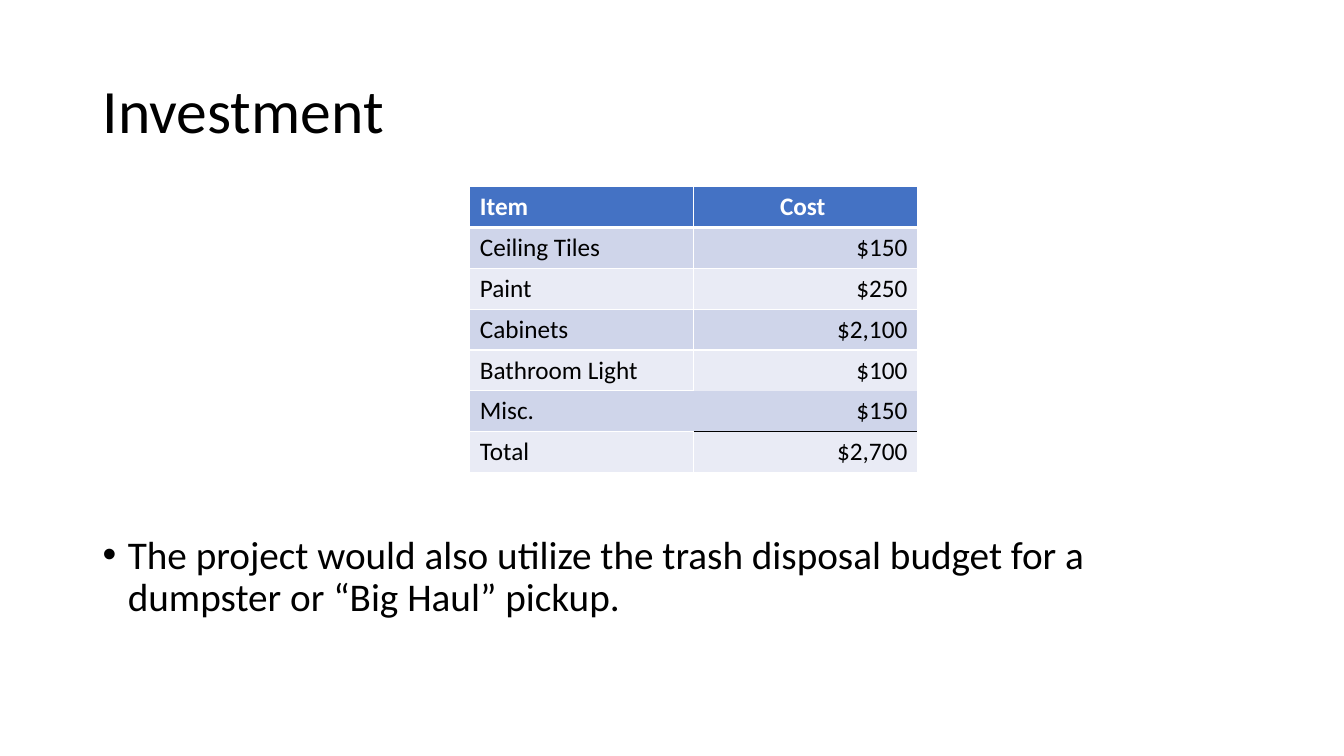
from lxml.etree import SubElement
from pptx import Presentation
from pptx.dml.color import RGBColor
from pptx.enum.text import MSO_ANCHOR as Anchor, PP_ALIGN as Align
from pptx.oxml import parse_xml
from pptx.oxml.ns import nsdecls, qn
from pptx.util import Inches, Pt

COLORS = {
    "text": "000000",
    "white": "FFFFFF",
    "header": "4472C4",
    "odd": "CFD5EA",
    "even": "E9EBF5",
}
COSTS = [
    ("Item", "Cost "),
    ("Ceiling Tiles", "$150"),
    ("Paint", "$250"),
    ("Cabinets", "$2,100"),
    ("Bathroom Light", "$100"),
    ("Misc.", "$150"),
    ("Total", "$2,700"),
]
NOTE = (
    "The project would also utilize the trash disposal budget for a "
    "dumpster or “Big Haul” pickup."
)
MISC_ROW = 5
TOTAL_ROW = 6


def set_all(target, values):
    for name, value in values.items():
        setattr(target, name, value)


def write(para, text, size, color="text", **values):
    span = para.add_run()
    span.text = text
    set_all(span.font, {"name": "Calibri", "size": Pt(size), **values})
    span.font.color.rgb = RGBColor.from_string(COLORS[color])


def add_text(page, place, text, size, anchor, **spacing):
    box = page.shapes.add_textbox(*map(Inches, place))
    set_all(box.text_frame, {"word_wrap": True, "vertical_anchor": anchor})
    para = box.text_frame.paragraphs[0]
    set_all(para, {"line_spacing": 0.9, **spacing})
    write(para, text, size)
    return para


def add_bullet(para, indent):
    properties = para._p.get_or_add_pPr()
    properties.set("marL", str(Inches(indent)))
    properties.set("indent", str(Inches(-indent)))
    SubElement(properties, qn("a:buFont")).set("typeface", "Arial")
    SubElement(properties, qn("a:buChar")).set("char", "•")


def cell_borders(row, column):
    borders = {side: ("white", 1) for side in "LRTB"}
    if row == 0:
        borders["B"] = ("white", 3)
    elif row == 1:
        borders["T"] = ("white", 3)
    if column == 1:
        if row == MISC_ROW - 1:
            del borders["B"]
        elif row == MISC_ROW:
            borders = {"B": ("text", 1)}
        elif row == TOTAL_ROW:
            borders["T"] = ("text", 1)
    elif row == MISC_ROW:
        del borders["R"]
    return borders


def draw_borders(cell, borders):
    properties = cell._tc.get_or_add_tcPr()
    for index, side in enumerate("LRTB"):
        color, width = borders.get(side, (None, 0))
        if color:
            paint = f'<a:solidFill><a:srgbClr val="{COLORS[color]}"/></a:solidFill>'
        else:
            paint = "<a:noFill/>"
        line = f'<a:ln{side} {nsdecls("a")} w="{Pt(width)}">{paint}</a:ln{side}>'
        properties.insert(index, parse_xml(line))


def fill_cell(cell, text, row, column):
    header = row == 0
    band = "header" if header else "odd" if row % 2 else "even"
    cell.fill.solid()
    cell.fill.fore_color.rgb = RGBColor.from_string(COLORS[band])
    para = cell.text_frame.paragraphs[0]
    if column == 1:
        para.alignment = Align.CENTER if header else Align.RIGHT
    write(para, text, 18, "white" if header else "text", bold=header)
    draw_borders(cell, cell_borders(row, column))


def add_cost_table(page, place):
    frame = page.shapes.add_table(len(COSTS), 2, *map(Inches, place))
    for row, texts in enumerate(COSTS):
        for column, text in enumerate(texts):
            fill_cell(frame.table.cell(row, column), text, row, column)


def main():
    deck = Presentation()
    set_all(deck, {"slide_width": Inches(13.33), "slide_height": Inches(7.5)})
    page = deck.slides.add_slide(deck.slide_layouts[6])
    add_text(page, (0.92, 0.4, 11.5, 1.45), "Investment", 44, Anchor.MIDDLE)
    note = add_text(
        page, (0.92, 5.26, 11.5, 1.53), NOTE, 28, Anchor.TOP, space_before=Pt(10)
    )
    add_bullet(note, 0.25)
    add_cost_table(page, (4.66, 1.85, 4.44, 2.84))
    deck.save("out.pptx")


if __name__ == "__main__":
    main()
